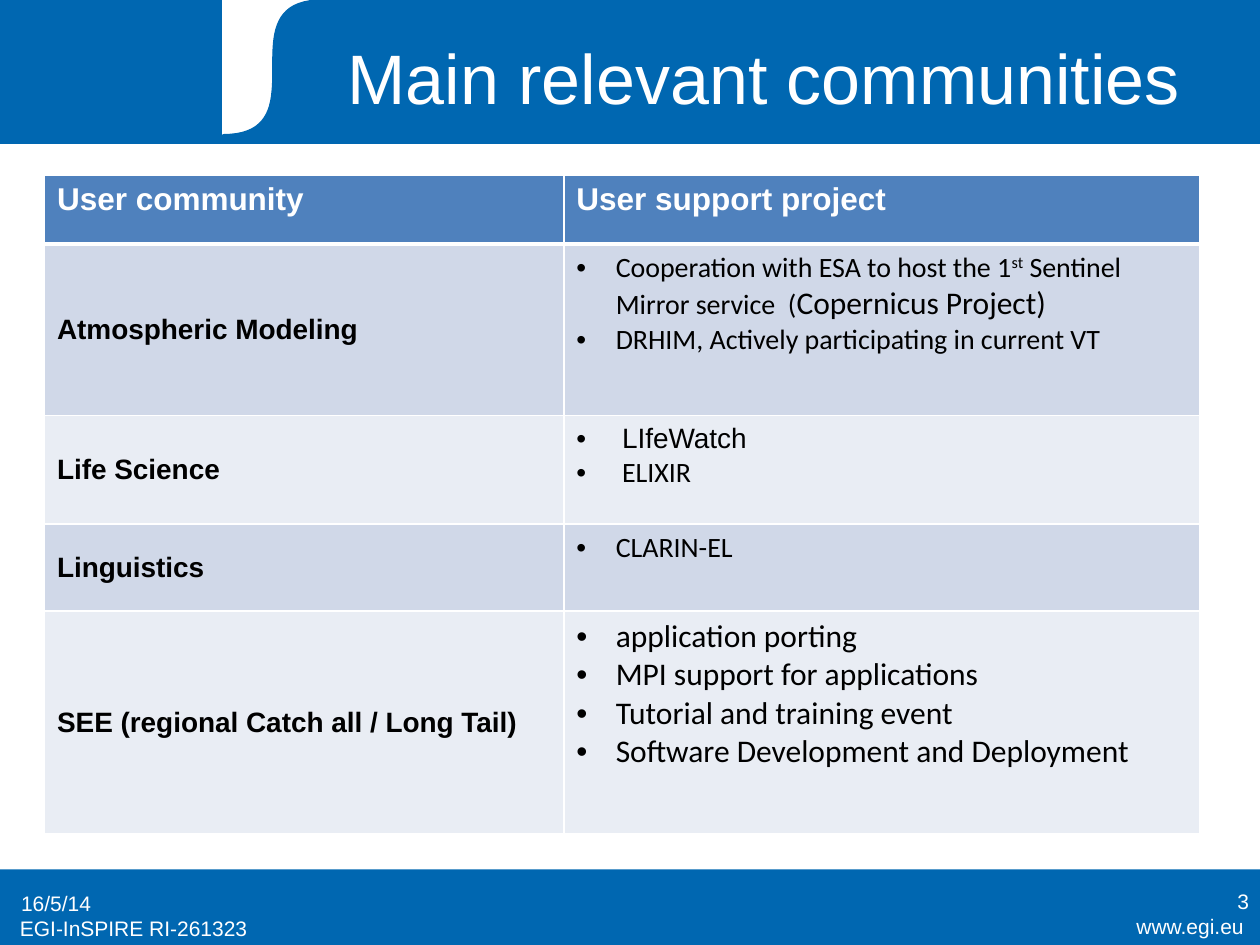
from pptx import Presentation
from pptx import util as u
from pptx.dml.color import RGBColor
from pptx.enum import shapes, text
from pptx.oxml import parse_xml
from pptx.oxml.ns import nsdecls

Pt = u.Pt
BLUE, WHITE, BLACK = "0067B1", "FFFFFF", "000000"
HEADER_FILL, BANDS = "4F81BD", ("D0D8E8", "E9EDF4")
LEFT, CENTER, RIGHT = text.PP_ALIGN.LEFT, text.PP_ALIGN.CENTER, text.PP_ALIGN.RIGHT
TOP, MIDDLE = text.MSO_ANCHOR.TOP, text.MSO_ANCHOR.MIDDLE

# Content: text, box (left, top, width, height), size, alignment, anchor
LABELS = [
    ("www.egi.eu", (604, 518.4, 113.8, 22.3), 12, RIGHT, TOP),
    ("EGI-InSPIRE RI-261323", (4.3, 519.8, 180, 22.3), 12, LEFT, TOP),
    ("Main relevant communities", (167, 9.4, 538.6, 68.4), 40, CENTER, MIDDLE),
    ("16/5/14", (5, 501.8, 167.8, 28.8), 12, LEFT, MIDDLE),
    ("3", (553, 500.4, 167.8, 28.8), 12, RIGHT, MIDDLE),
]

HEADINGS = ("User community", "User support project")
BODY = {"name": "Calibri", "size": 16}
LARGE = {"name": "Calibri", "size": 18}
SANS = {"name": "Arial", "size": 16}
SUPER = {**BODY, "baseline": 30000}

# Community, then its support projects as paragraphs of (text, format) runs
COMMUNITIES = [
    ("Atmospheric Modeling", [
        [("Cooperation with ESA to host the 1", BODY), ("st", SUPER),
         (" Sentinel Mirror service  (", BODY), ("Copernicus Project)", LARGE)],
        [("DRHIM, Actively participating in current VT", BODY)],
    ]),
    ("Life Science", [
        [(" ", BODY), ("LIfeWatch", SANS)],
        [(" ELIXIR", BODY)],
    ]),
    ("Linguistics", [[("CLARIN-EL", BODY)]]),
    ("SEE (regional Catch all / Long Tail)", [
        [("application porting", LARGE)],
        [("MPI support for applications", LARGE)],
        [("Tutorial and training event", LARGE)],
        [("Software Development and Deployment", LARGE)],
    ]),
]
COLUMN_WIDTHS = (296.8, 363.4)
ROW_HEIGHTS = (39.3, 98, 62, 49.7, 127.4)


def rgb(value):
    return RGBColor.from_string(value)


def paint(shape, fill, line=None):
    shape.shadow.inherit = False
    shape.fill.solid()
    shape.fill.fore_color.rgb = rgb(fill)
    if line:
        shape.line.color.rgb = rgb(line)
        shape.line.width = Pt(0.75)
    else:
        shape.line.fill.background()


def add_bar(slide, box, fill, line=None):
    bar = slide.shapes.add_shape(shapes.MSO_SHAPE.RECTANGLE, *map(Pt, box))
    paint(bar, fill, line)


def add_run(paragraph, words, style, color=BLACK):
    run = paragraph.add_run()
    run.text = words
    for key, value in style.items():
        if key == "baseline":
            run._r.get_or_add_rPr().set(key, str(value))
        else:
            setattr(run.font, key, Pt(value) if key == "size" else value)
    run.font.color.rgb = rgb(color)


def add_label(slide, words, box, size, align, anchor):
    frame = slide.shapes.add_textbox(*map(Pt, box)).text_frame
    frame.word_wrap = True
    frame.vertical_anchor = anchor
    frame.paragraphs[0].alignment = align
    add_run(frame.paragraphs[0], words, {"name": "Arial", "size": size}, WHITE)


def add_bullet(paragraph, indent=22.5):
    props = paragraph._p.get_or_add_pPr()
    props.set("marL", str(Pt(indent)))
    props.set("indent", str(-Pt(indent)))
    props.append(parse_xml(f'<a:buFont {nsdecls("a")} typeface="Arial"/>'))
    props.append(parse_xml(f'<a:buChar {nsdecls("a")} char="•"/>'))


def style_cell(cell, fill, top=1, bottom=1):
    cell.fill.solid()
    cell.fill.fore_color.rgb = rgb(fill)
    widths = {"lnL": 1, "lnR": 1, "lnT": top, "lnB": bottom}
    for place, (side, width) in enumerate(widths.items()):
        cell._tc.get_or_add_tcPr().insert(place, parse_xml(
            f'<a:{side} {nsdecls("a")} w="{Pt(width)}"><a:solidFill>'
            f'<a:srgbClr val="{WHITE}"/></a:solidFill></a:{side}>'))


def add_banner(slide):
    left, right, bottom = 127.5, 269.3, 77
    add_bar(slide, (0, 0, 720, 82.1), BLUE, BLUE)
    add_bar(slide, (left, 0, right - left, bottom), WHITE, WHITE)
    # S-shaped edge: cubic curve from the bottom left up to the top
    swing, steps = 56.9, 40
    curve = []
    for step in range(1, steps + 1):
        t = step / steps
        x = left + swing * (3 * t * (1 - t) ** 2 + t ** 3)
        y = bottom * ((1 - t) ** 3 + 3 * t * (1 - t) ** 2)
        curve.append((Pt(x), Pt(y)))
    outline = slide.shapes.build_freeform(Pt(right), 0)
    outline.add_line_segments([(Pt(right), Pt(bottom)), (Pt(left), Pt(bottom))] + curve)
    paint(outline.convert_to_shape(), BLUE, BLUE)


def add_communities(slide):
    table = slide.shapes.add_table(
        len(ROW_HEIGHTS), len(COLUMN_WIDTHS), Pt(25.4), Pt(100.2),
        Pt(sum(COLUMN_WIDTHS)), Pt(sum(ROW_HEIGHTS))).table
    for column, width in zip(table.columns, COLUMN_WIDTHS):
        column.width = Pt(width)
    for row, height in zip(table.rows, ROW_HEIGHTS):
        row.height = Pt(height)

    for col, heading in enumerate(HEADINGS):
        cell = table.cell(0, col)
        style_cell(cell, HEADER_FILL, bottom=3)
        add_run(cell.text_frame.paragraphs[0], heading,
                {"name": "Arial", "size": 18, "bold": True}, WHITE)

    for row, (community, projects) in enumerate(COMMUNITIES, 1):
        name_cell, project_cell = table.cell(row, 0), table.cell(row, 1)
        for cell in (name_cell, project_cell):
            style_cell(cell, BANDS[(row - 1) % 2], top=3 if row == 1 else 1)
        name_cell.vertical_anchor = MIDDLE
        add_run(name_cell.text_frame.paragraphs[0], community, {**SANS, "bold": True})
        frame = project_cell.text_frame
        for index, runs in enumerate(projects):
            paragraph = frame.add_paragraph() if index else frame.paragraphs[0]
            add_bullet(paragraph)
            for words, style in runs:
                add_run(paragraph, words, {**style, "bold": False})


def main():
    deck = Presentation()
    deck.slide_width, deck.slide_height = Pt(720), Pt(540)
    slide = deck.slides.add_slide(deck.slide_layouts[6])
    # Footer bar and banner
    add_bar(slide, (0, 496.8, 720, 43.2), BLUE)
    add_banner(slide)
    # Title and footer texts
    for label in LABELS:
        add_label(slide, *label)
    add_communities(slide)
    deck.save("out.pptx")


if __name__ == "__main__":
    main()
